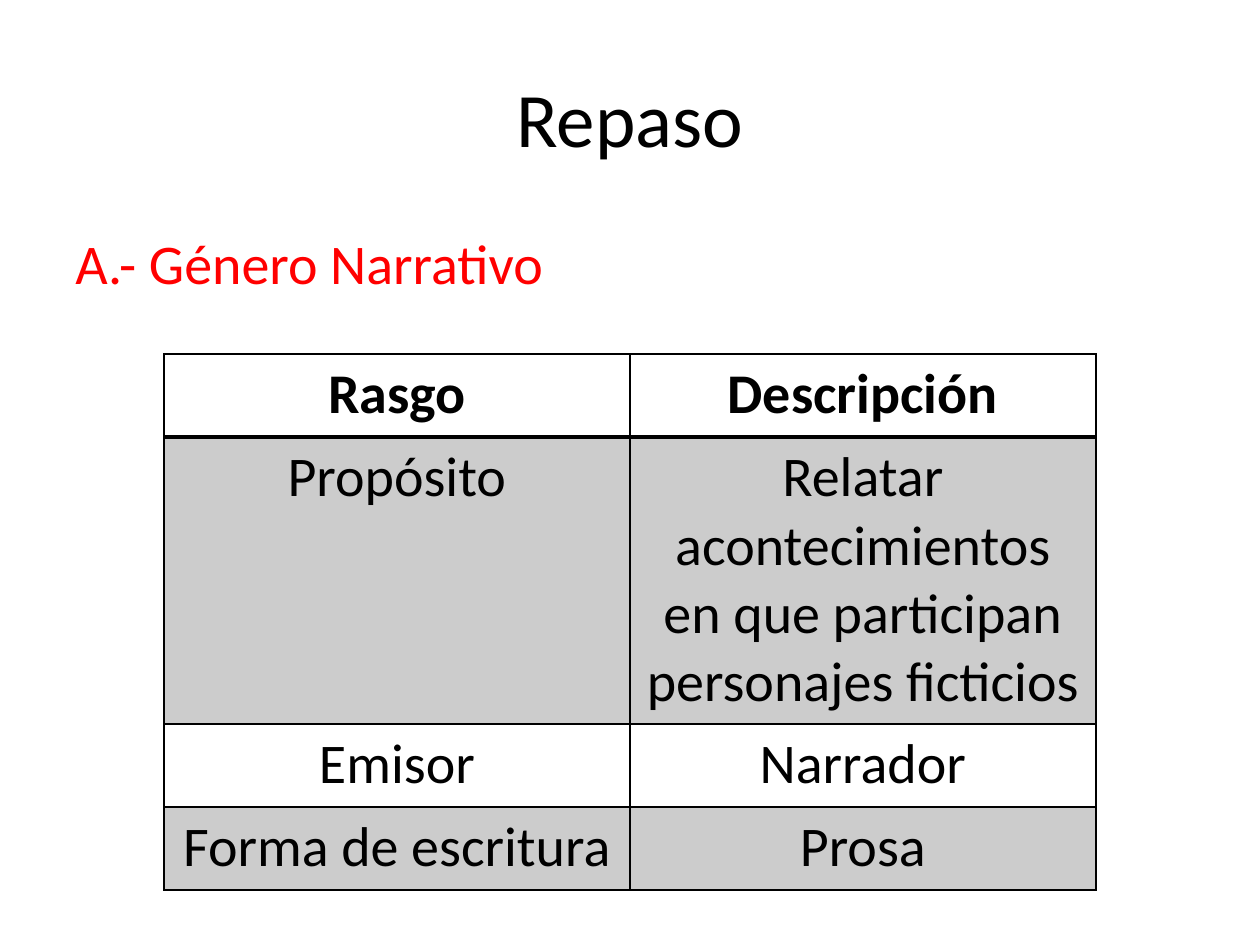
from dataclasses import dataclass

from lxml.etree import SubElement
from pptx import Presentation
from pptx.dml.color import RGBColor as RGB
from pptx.enum.text import MSO_ANCHOR as Anchor, PP_ALIGN as Align
from pptx.oxml import parse_xml
from pptx.oxml.ns import nsdecls, qn
from pptx.util import Emu, Pt

PX_PER_INCH = 126


@dataclass(frozen=True)
class Theme:
    font: str = "Calibri"
    title_size: int = 44
    body_size: int = 32
    ink: str = "000000"
    accent: str = "FF0000"
    band: str = "CCCCCC"
    rule: int = 1
    header_rule: int = 2


@dataclass(frozen=True)
class Box:
    x: int
    y: int
    w: int
    h: int


@dataclass(frozen=True)
class Label:
    text: str
    box: Box
    size: int
    color: str
    align: Align
    anchor: Anchor


@dataclass(frozen=True)
class Row:
    trait: str
    description: str
    height: int = 83
    header: bool = False
    banded: bool = False


THEME = Theme()
LABELS = [
    Label("Repaso", Box(63, 38, 1134, 158), THEME.title_size, THEME.ink,
          Align.CENTER, Anchor.MIDDLE),
    Label("A.- Género Narrativo", Box(63, 222, 1134, 622), THEME.body_size,
          THEME.accent, Align.LEFT, Anchor.TOP),
]
ROWS = [
    Row("Rasgo", "Descripción", header=True),
    Row("Propósito",
        "Relatar acontecimientos en que participan personajes ficticios",
        height=287, banded=True),
    Row("Emisor", "Narrador"),
    Row("Forma de escritura", "Prosa", banded=True),
]
TABLE = Box(164, 354, 932, sum(row.height for row in ROWS))


def px(n: int) -> Emu:
    return Emu(round(n * 914400 / PX_PER_INCH))


def style_text(tf, size: int, color: str, align: Align, bold: bool = False) -> None:
    for p in tf.paragraphs:
        p.alignment = align
        for r in p.runs:
            r.font.name = THEME.font
            r.font.size = Pt(size)
            r.font.bold = bold
            r.font.color.rgb = RGB.from_string(color)


def add_label(s, label: Label) -> None:
    b = label.box
    sp = s.shapes.add_textbox(px(b.x), px(b.y), px(b.w), px(b.h))
    tf = sp.text_frame
    tf.word_wrap = True
    tf.vertical_anchor = label.anchor
    tf.text = label.text
    style_text(tf, label.size, label.color, label.align)


def set_borders(cell, top: int, bottom: int) -> None:
    tc_pr = cell._tc.get_or_add_tcPr()
    widths = {"lnL": THEME.rule, "lnR": THEME.rule, "lnT": top, "lnB": bottom}
    for i, (tag, width) in enumerate(widths.items()):
        ln = parse_xml(f'<a:{tag} {nsdecls("a")} w="{Pt(width)}"/>')
        fill = SubElement(ln, qn("a:solidFill"))
        SubElement(fill, qn("a:srgbClr"), val=THEME.ink)
        tc_pr.insert(i, ln)


def add_traits_table(s, rows: list[Row], b: Box) -> None:
    table = s.shapes.add_table(len(rows), 2, px(b.x), px(b.y), px(b.w), px(b.h)).table
    table.first_row = table.horz_banding = False
    for col in table.columns:
        col.width = px(b.w // 2)
    for i, row in enumerate(rows):
        table.rows[i].height = px(row.height)
        top = THEME.header_rule if i and rows[i - 1].header else THEME.rule
        bottom = THEME.header_rule if row.header else THEME.rule
        for j, text in enumerate((row.trait, row.description)):
            cell = table.cell(i, j)
            cell.text_frame.text = text
            style_text(cell.text_frame, THEME.body_size, THEME.ink,
                       Align.CENTER, row.header)
            if row.banded:
                cell.fill.solid()
                cell.fill.fore_color.rgb = RGB.from_string(THEME.band)
            else:
                cell.fill.background()
            set_borders(cell, top, bottom)


def main() -> None:
    prs = Presentation()
    prs.slide_width, prs.slide_height = px(1260), px(945)
    s = prs.slides.add_slide(prs.slide_layouts[6])
    for label in LABELS:
        add_label(s, label)
    add_traits_table(s, ROWS, TABLE)
    prs.save("out.pptx")


if __name__ == "__main__":
    main()
